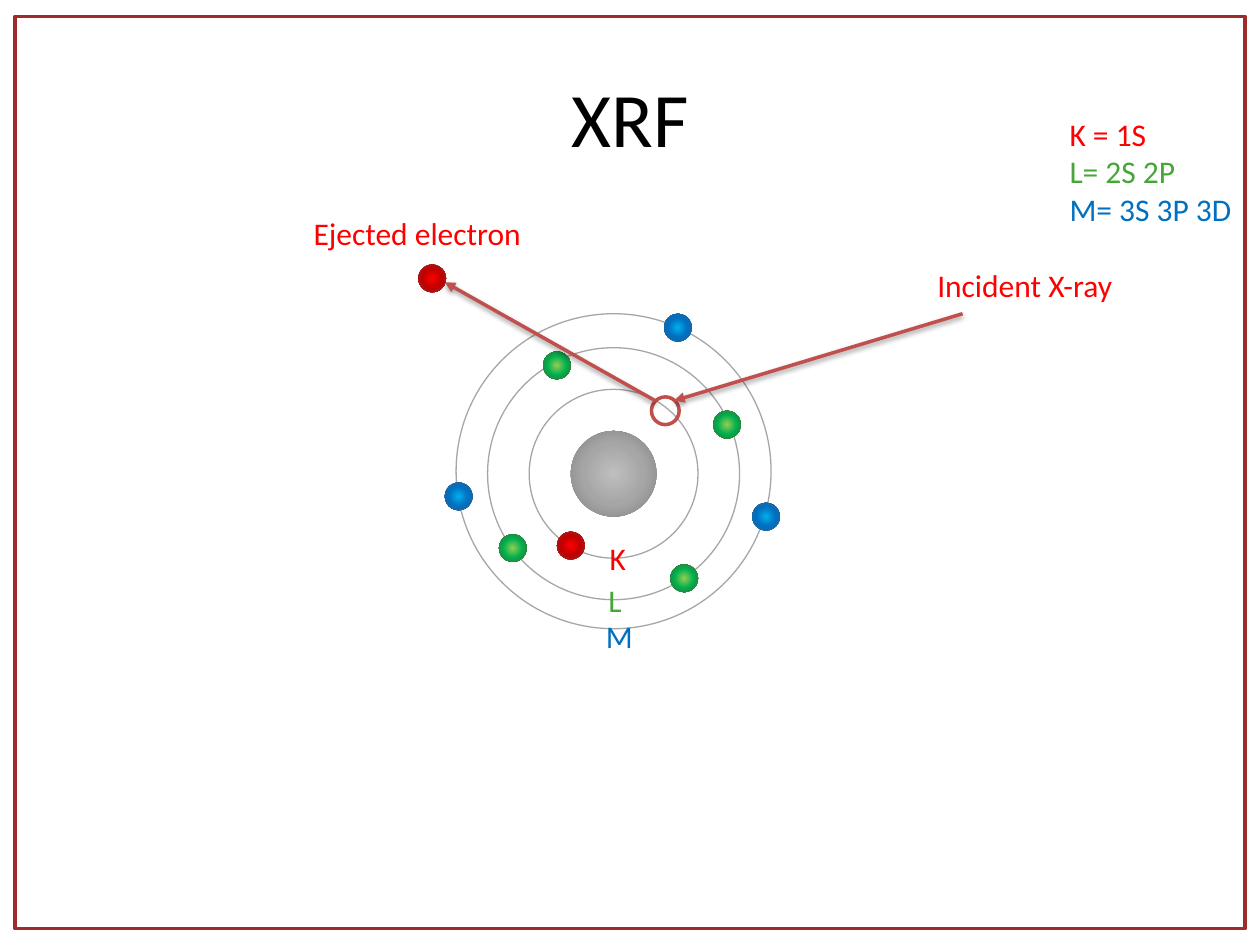
import pptx
import pptx.util
import pptx.oxml
import pptx.oxml.ns
import pptx.dml.color
import pptx.enum.shapes
import pptx.enum.text
from lxml import etree

RGB = pptx.dml.color.RGBColor
Pt = pptx.util.Pt
qn = pptx.oxml.ns.qn
SHAPE = pptx.enum.shapes.MSO_SHAPE

BLACK = RGB(0x00, 0x00, 0x00)
RED = RGB(0xFF, 0x00, 0x00)
GREEN = RGB(0x46, 0xA6, 0x38)
BLUE = RGB(0x00, 0x70, 0xC0)
ORBIT_GRAY = RGB(0xA6, 0xA6, 0xA6)
ARROW_RED = RGB(0xC0, 0x50, 0x4D)
FRAME_RED = RGB(0x9C, 0x2D, 0x2A)

# Radial gradients, from the centre to the rim
NUCLEUS_FILL = (RGB(0xBF, 0xBF, 0xBF), ORBIT_GRAY, RGB(0x80, 0x80, 0x80))
K_FILL = (RED, RGB(0xC0, 0x00, 0x00), RGB(0x95, 0x37, 0x35))
L_FILL = (RGB(0x92, 0xD0, 0x50), RGB(0x00, 0xB0, 0x50), RGB(0x4F, 0x62, 0x28))
M_FILL = (RGB(0x00, 0xB0, 0xF0), BLUE, RGB(0x37, 0x60, 0x92))

FONT = "Calibri"
COLS, ROWS = 100, 75  # grid of square cells, 0.1 inch each
ELECTRON_R = 1.1
CENTER = (48.7, 37.6)


def cells(*values):
    return [pptx.util.Inches(v / 10) for v in values]


def add_run(p, text, size, color):
    r = p.add_run()
    r.text = text
    r.font.name = FONT
    r.font.size = Pt(size)
    r.font.color.rgb = color


def add_title(slide, text):
    title = slide.shapes.title
    title.left, title.top, title.width, title.height = cells(5, 3, 90, 12.5)
    tf = title.text_frame
    tf.vertical_anchor = pptx.enum.text.MSO_ANCHOR.MIDDLE
    p = tf.paragraphs[0]
    p.alignment = pptx.enum.text.PP_ALIGN.CENTER
    add_run(p, text, 44, BLACK)


def add_label(slide, box, *lines):
    tf = slide.shapes.add_textbox(*cells(*box)).text_frame
    tf.word_wrap = False
    tf.auto_size = pptx.enum.text.MSO_AUTO_SIZE.SHAPE_TO_FIT_TEXT
    for i, (text, color) in enumerate(lines):
        p = tf.add_paragraph() if i else tf.paragraphs[0]
        add_run(p, text, 18, color)


def add_outline(slide, kind, box, color, width):
    sp = slide.shapes.add_shape(kind, *cells(*box))
    sp.shadow.inherit = False
    sp.fill.background()
    sp.line.color.rgb = color
    sp.line.width = Pt(width)


def circle_box(center, radius):
    x, y = center
    return x - radius, y - radius, 2 * radius, 2 * radius


def add_ring(slide, center, radius, color, width):
    add_outline(slide, SHAPE.OVAL, circle_box(center, radius), color, width)


def add_ball(slide, center, radius, colors):
    sp = slide.shapes.add_shape(SHAPE.OVAL, *cells(*circle_box(center, radius)))
    sp.shadow.inherit = False
    sp.line.fill.background()
    sp.fill.gradient()
    # Turn the linear gradient into a radial one
    grad = sp._element.spPr.find(qn("a:gradFill"))
    for child in list(grad):
        grad.remove(child)
    stops = etree.SubElement(grad, qn("a:gsLst"))
    for pos, color in zip((0, 50000, 100000), colors):
        gs = etree.SubElement(stops, qn("a:gs"), pos=str(pos))
        etree.SubElement(gs, qn("a:srgbClr"), val=str(color))
    radial = etree.SubElement(grad, qn("a:path"), path="circle")
    etree.SubElement(radial, qn("a:fillToRect"),
                     {side: "50000" for side in "ltrb"})


def add_arrow(slide, start, end):
    line = slide.shapes.add_connector(
        pptx.enum.shapes.MSO_CONNECTOR.STRAIGHT, *cells(*start, *end))
    line.line.color.rgb = ARROW_RED
    line.line.width = Pt(2)
    spPr = line._element.spPr
    etree.SubElement(spPr.find(qn("a:ln")), qn("a:tailEnd"), type="triangle")
    # Soft shadow straight below
    effects = etree.SubElement(spPr, qn("a:effectLst"))
    shadow = etree.SubElement(
        effects, qn("a:outerShdw"), blurRad=str(Pt(3.1)), dist=str(Pt(1.6)),
        dir="5400000", rotWithShape="0")
    color = etree.SubElement(shadow, qn("a:srgbClr"), val=str(BLACK))
    etree.SubElement(color, qn("a:alpha"), val="38000")


def main():
    prs = pptx.Presentation()
    prs.slide_width, prs.slide_height = cells(COLS, ROWS)
    slide = prs.slides.add_slide(prs.slide_layouts[5])
    add_title(slide, "XRF")

    # Nucleus and K, L, M orbits
    add_ball(slide, CENTER, 3.4, NUCLEUS_FILL)
    for center, radius in ((CENTER, 6.7), (CENTER, 10), ((48.7, 37.4), 12.5)):
        add_ring(slide, center, radius, ORBIT_GRAY, 0.75)

    # Vacancy and electrons by shell
    add_ring(slide, (52.8, 32.6), ELECTRON_R, ARROW_RED, 2)
    shells = (
        (K_FILL, [(45.3, 43.3)]),
        (L_FILL, [(54.3, 45.9), (57.7, 33.7), (44.2, 29), (40.7, 43.5)]),
        (M_FILL, [(53.8, 26), (60.8, 41), (36.4, 39.4)]),
    )
    for colors, centers in shells:
        for center in centers:
            add_ball(slide, center, ELECTRON_R, colors)

    # Incident ray and ejected electron
    add_arrow(slide, (76.4, 24.9), (53.5, 31.8))
    add_arrow(slide, (52, 31.8), (35.3, 22.4))
    add_label(slide, (73.4, 20.6, 16.2, 4), ("Incident X-ray", RED))
    add_label(slide, (23.9, 16.5, 18.7, 4), ("Ejected electron", RED))
    add_ball(slide, (34.3, 22.1), ELECTRON_R, K_FILL)

    # Shell names and legend
    add_label(slide, (47.4, 42.3, 3.3, 4), ("K", RED))
    add_label(slide, (47.3, 45.6, 3.1, 4), ("L", GREEN))
    add_label(slide, (47.1, 48.5, 4.2, 4), ("M", BLUE))
    add_label(slide, (83.9, 8.6, 15, 10.1),
              ("K = 1S", RED), ("L= 2S 2P", GREEN), ("M= 3S 3P 3D", BLUE))

    # Slide frame
    add_outline(slide, SHAPE.RECTANGLE, (1.2, 1.3, 97.6, 72.4), FRAME_RED, 2)

    prs.save("out.pptx")


if __name__ == "__main__":
    main()
